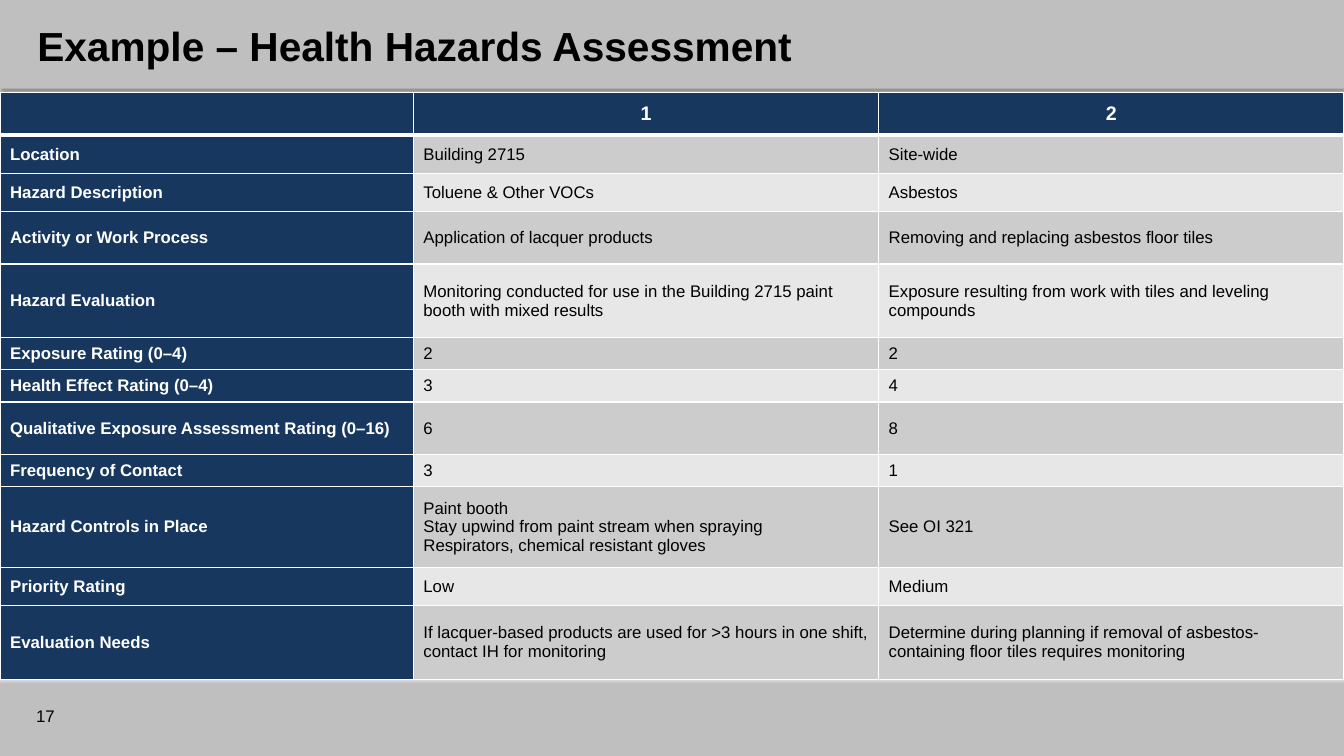
"""Build the health hazards assessment slide."""
from dataclasses import dataclass

import lxml.etree
import pptx
import pptx.dml.color
import pptx.enum.shapes
import pptx.enum.text
import pptx.oxml.ns
import pptx.util

Inches = pptx.util.Inches
qn = pptx.oxml.ns.qn

TITLE = "Example – Health Hazards Assessment"
PAGE_NUMBER = "17"
HEADER = ("", "1", "2")
HEADER_HEIGHT = 0.42
ASSESSMENT = [
    (0.38, "Location", "Building 2715", "Site-wide"),
    (0.38, "Hazard Description", "Toluene & Other VOCs", "Asbestos"),
    (0.52, "Activity or Work Process", "Application of lacquer products",
     "Removing and replacing asbestos floor tiles"),
    (0.73, "Hazard Evaluation",
     "Monitoring conducted for use in the Building 2715 paint booth with mixed results",
     "Exposure resulting from work with tiles and leveling compounds"),
    (0.32, "Exposure Rating (0–4)", "2", "2"),
    (0.32, "Health Effect Rating (0–4)", "3", "4"),
    (0.52, "Qualitative Exposure Assessment Rating (0–16)", "6", "8"),
    (0.32, "Frequency of Contact", "3", "1"),
    (0.8, "Hazard Controls in Place",
     "Paint booth\nStay upwind from paint stream when spraying\n"
     "Respirators, chemical resistant gloves", "See OI 321"),
    (0.38, "Priority Rating", "Low", "Medium"),
    (0.73, "Evaluation Needs",
     "If lacquer-based products are used for >3 hours in one shift, contact IH for monitoring",
     "Determine during planning if removal of asbestos-containing floor tiles requires monitoring"),
]
SLIDE_WIDTH, SLIDE_HEIGHT = 13.33, 7.5
BANDS = [(0, 0.88), (6.78, 0.72)]
TABLE_TOP = 0.92
LABEL_WIDTH = 4.1


@dataclass(frozen=True)
class Theme:
    """Colours and type sizes of the slide."""
    font: str = "Arial"
    background: str = "D9D9D9"
    band: str = "BFBFBF"
    navy: str = "17375E"
    stripes: tuple = ("CCCCCC", "E7E7E7")
    black: str = "000000"
    white: str = "FFFFFF"
    title_size: int = 29
    header_size: int = 14
    body_size: int = 12


THEME = Theme()


def paint(fill, color):
    """Give a fill one solid colour."""
    fill.solid()
    fill.fore_color.rgb = pptx.dml.color.RGBColor.from_string(color)


def write(frame, text, size, color, bold=False, align=pptx.enum.text.PP_ALIGN.LEFT):
    """Put text in a frame, one paragraph for each line."""
    frame.text = text
    frame.word_wrap = True
    for paragraph in frame.paragraphs:
        paragraph.alignment = align
        font = paragraph.font
        font.name, font.size, font.bold = THEME.font, pptx.util.Pt(size), bold
        font.color.rgb = pptx.dml.color.RGBColor.from_string(color)


def add_band(slide, top, height):
    """Add a shadowed band behind the title placeholder."""
    band = slide.shapes.add_shape(
        pptx.enum.shapes.MSO_SHAPE.RECTANGLE, 0, Inches(top), Inches(SLIDE_WIDTH), Inches(height))
    paint(band.fill, THEME.band)
    band.line.fill.background()
    band.shadow.inherit = False
    effects = band.element.spPr.find(qn("a:effectLst"))
    shadow = lxml.etree.SubElement(
        effects, qn("a:outerShdw"), blurRad=str(pptx.util.Pt(3.1)), dist=str(pptx.util.Pt(1.8)),
        dir="5400000", algn="t", rotWithShape="0")
    color = lxml.etree.SubElement(shadow, qn("a:srgbClr"), val=THEME.black)
    lxml.etree.SubElement(color, qn("a:alpha"), val="35000")
    slide.shapes.title.element.addprevious(band.element)


def set_borders(cell, bottom_width):
    """Draw white borders on the four sides of a cell."""
    properties = cell._tc.get_or_add_tcPr()
    for index, side in enumerate("LRTB"):
        width = bottom_width if side == "B" else 1
        line = lxml.etree.Element(qn(f"a:ln{side}"), w=str(pptx.util.Pt(width)))
        fill = lxml.etree.SubElement(line, qn("a:solidFill"))
        lxml.etree.SubElement(fill, qn("a:srgbClr"), val=THEME.white)
        properties.insert(index, line)


def add_assessment(slide):
    """Add the assessment table."""
    rows = [(HEADER_HEIGHT, *HEADER), *ASSESSMENT]
    value_width = (SLIDE_WIDTH - LABEL_WIDTH) / (len(HEADER) - 1)
    table = slide.shapes.add_table(
        len(rows), len(HEADER), 0, Inches(TABLE_TOP), Inches(SLIDE_WIDTH),
        Inches(sum(row[0] for row in rows))).table
    table.first_col = True
    for index, column in enumerate(table.columns):
        column.width = Inches(value_width if index else LABEL_WIDTH)
    for row_index, (height, *texts) in enumerate(rows):
        table.rows[row_index].height = Inches(height)
        is_header = row_index == 0
        for column_index, text in enumerate(texts):
            cell = table.cell(row_index, column_index)
            is_heading = is_header or column_index == 0
            stripe = THEME.stripes[(row_index - 1) % 2]
            paint(cell.fill, THEME.navy if is_heading else stripe)
            set_borders(cell, 3 if is_header else 1)
            cell.vertical_anchor = pptx.enum.text.MSO_ANCHOR.MIDDLE
            alignment = pptx.enum.text.PP_ALIGN
            write(cell.text_frame, text,
                  THEME.header_size if is_header else THEME.body_size,
                  THEME.white if is_heading else THEME.black, is_heading,
                  alignment.CENTER if is_header else alignment.LEFT)


def main():
    """Build and save the presentation."""
    presentation = pptx.Presentation()
    presentation.slide_width = Inches(SLIDE_WIDTH)
    presentation.slide_height = Inches(SLIDE_HEIGHT)
    slide = presentation.slides.add_slide(presentation.slide_layouts.get_by_name("Title Only"))
    paint(slide.background.fill, THEME.background)
    for top, height in BANDS:
        add_band(slide, top, height)

    title = slide.shapes.title
    title.left, title.top = Inches(0.27), Inches(0.14)
    title.width, title.height = Inches(12.93), Inches(0.62)
    write(title.text_frame, TITLE, THEME.title_size, THEME.black, bold=True)
    number = slide.shapes.add_textbox(Inches(0.26), Inches(6.9), Inches(1), Inches(0.4))
    write(number.text_frame, PAGE_NUMBER, THEME.body_size, THEME.black)
    for shape in (title, number):
        shape.text_frame.vertical_anchor = pptx.enum.text.MSO_ANCHOR.MIDDLE
    add_assessment(slide)
    presentation.save("out.pptx")


if __name__ == "__main__":
    main()
